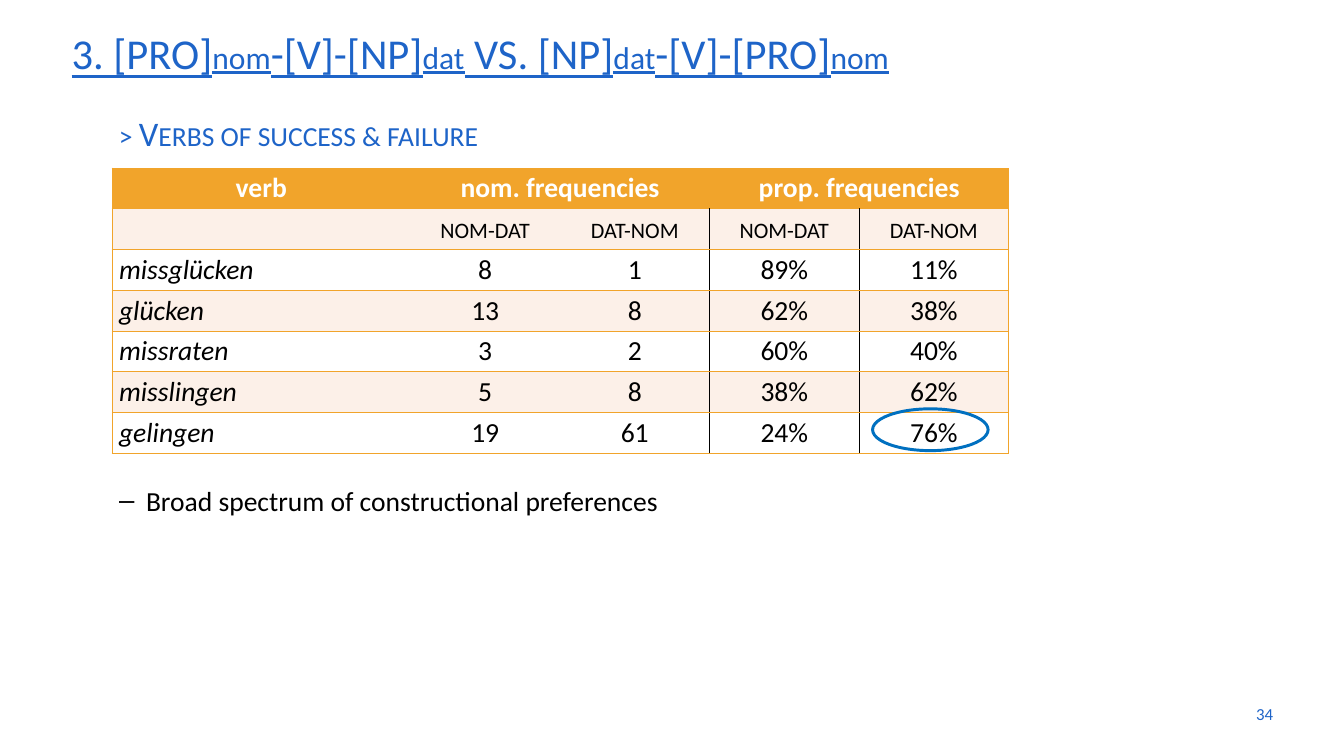
import pptx
import pptx.dml.color
import pptx.enum.shapes
import pptx.enum.text
import pptx.oxml.ns
import pptx.util
from lxml import etree

Inches = pptx.util.Inches
Pt = pptx.util.Pt
qn = pptx.oxml.ns.qn
ALIGN = pptx.enum.text.PP_ALIGN
ANCHOR = pptx.enum.text.MSO_ANCHOR


def color(value):
    return pptx.dml.color.RGBColor.from_string(value)


class FrequencySlide:
    FONT = "Calibri"
    BLUE = "1E64C8"
    ORANGE = "F1A42B"
    CREAM = "FCF0E8"
    WHITE = "FFFFFF"
    BLACK = "000000"
    CIRCLE = "0070C0"

    def __init__(self, presentation):
        self.slide = presentation.slides.add_slide(presentation.slide_layouts[1])

    def place(self, shape, box, anchor=ANCHOR.TOP):
        shape.left, shape.top, shape.width, shape.height = map(Inches, box)
        frame = shape.text_frame
        frame.word_wrap = True
        frame.auto_size = pptx.enum.text.MSO_AUTO_SIZE.NONE
        frame.vertical_anchor = anchor
        return frame.paragraphs[0]

    def format(self, paragraph, size, ink, align=ALIGN.LEFT, spacing=1.0,
               bold=False, italic=False, small_caps=False):
        paragraph.alignment = align
        paragraph.line_spacing = spacing
        paragraph.space_before = Pt(0)
        font = paragraph.font
        font.name = self.FONT
        font.size = Pt(size)
        font.bold = bold
        font.italic = italic
        font.color.rgb = color(ink)
        if small_caps:
            paragraph._p.pPr.find(qn("a:defRPr")).set("cap", "small")

    def title(self, parts, box):
        paragraph = self.place(self.slide.shapes.title, box)
        self.format(paragraph, 54, self.BLUE, spacing=0.9)
        paragraph.font.underline = True
        for index, text in enumerate(parts):
            run = paragraph.add_run()
            run.text = text
            is_case_label = index % 2 == 1
            run.font.size = Pt(32 if is_case_label else 54)
            if not is_case_label:
                run._r.get_or_add_rPr().set("cap", "small")

    def text(self, text, box, size, anchor=ANCHOR.TOP, **style):
        shape = self.slide.shapes.add_textbox(0, 0, 0, 0)
        paragraph = self.place(shape, box, anchor)
        paragraph.text = text
        self.format(paragraph, size, self.BLUE, **style)

    def bullet(self, text, box):
        paragraph = self.place(self.slide.placeholders[1], box)
        paragraph.text = text
        properties = paragraph._p.get_or_add_pPr()
        properties.set("marL", str(Inches(0.38)))
        properties.set("indent", str(Inches(-0.38)))
        etree.SubElement(properties, qn("a:buChar")).set("char", "–")
        self.format(paragraph, 28, self.BLACK, spacing=1.5)

    def borders(self, cell, **inks):
        properties = cell._tc.get_or_add_tcPr()
        for side in "LRTB":
            line = etree.SubElement(properties, qn(f"a:ln{side}"))
            line.set("w", str(Pt(1)))
            if inks.get(side):
                fill = etree.SubElement(line, qn("a:solidFill"))
                etree.SubElement(fill, qn("a:srgbClr")).set("val", inks[side])
            else:
                etree.SubElement(line, qn("a:noFill"))

    def cell(self, table, row, column, text):
        cell = table.cell(row, column)
        divider = self.BLACK if row else None
        left = {0: self.ORANGE, 3: divider, 4: divider}
        right = {2: divider, 3: divider, 4: self.ORANGE}
        self.borders(cell, L=left.get(column), R=right.get(column),
                     T=self.ORANGE, B=self.ORANGE)
        cell.fill.solid()
        stripe = self.CREAM if row % 2 else self.WHITE
        cell.fill.fore_color.rgb = color(stripe if row else self.ORANGE)
        paragraph = cell.text_frame.paragraphs[0]
        if text:
            paragraph.text = text
        is_verb = row > 1 and column == 0
        self.format(paragraph, 28, self.BLACK if row else self.WHITE,
                    align=ALIGN.LEFT if is_verb else ALIGN.CENTER,
                    bold=row == 0, italic=is_verb, small_caps=row == 1)

    def table(self, rows, widths, box):
        frame = self.slide.shapes.add_table(len(rows), len(widths), *map(Inches, box))
        table = frame.table
        table.first_row = table.horz_banding = False
        for column, width in zip(table.columns, widths):
            column.width = Inches(width)
        for row, values in enumerate(rows):
            for column, text in enumerate(values):
                self.cell(table, row, column, text)
        for column in (1, 3):
            table.cell(0, column).merge(table.cell(0, column + 1))

    def ellipse(self, box):
        shape = self.slide.shapes.add_shape(
            pptx.enum.shapes.MSO_SHAPE.OVAL, *map(Inches, box))
        shape.shadow.inherit = False
        shape.fill.background()
        shape.line.color.rgb = color(self.CIRCLE)
        shape.line.width = Pt(3)


def main():
    presentation = pptx.Presentation()
    presentation.slide_width = Inches(18.96)
    presentation.slide_height = Inches(10.67)
    page = FrequencySlide(presentation)

    page.title(["3. [pro]", "nom", "-[v]-[np]", "dat", " vs. [np]", "dat",
                "-[v]-[pro]", "nom"], (0.91, 0.28, 17.18, 0.94))
    page.text("34", (17.05, 9.79, 1.01, 0.57), 17.1,
              anchor=ANCHOR.MIDDLE, align=ALIGN.RIGHT)
    page.text("> Verbs of success & failure", (1.58, 1.42, 9.28, 0.75), 35,
              spacing=1.2, small_caps=True)
    page.table([
        ["verb", "nom. frequencies", "", "prop. frequencies", ""],
        ["", "nom-dat", "dat-nom", "nom-dat", "dat-nom"],
        ["missglücken", "8", "1", "89%", "11%"],
        ["glücken", "13", "8", "62%", "38%"],
        ["missraten", "3", "2", "60%", "40%"],
        ["misslingen", "5", "8", "38%", "62%"],
        ["gelingen", "19", "61", "24%", "76%"],
    ], [4.21] + [2.11] * 4, (1.58, 2.37, 12.64, 3.97))
    page.bullet("Broad spectrum of constructional preferences",
                (1.58, 6.54, 12.64, 0.72))
    page.ellipse((12.31, 5.77, 1.63, 0.59))

    presentation.save("out.pptx")


if __name__ == "__main__":
    main()
